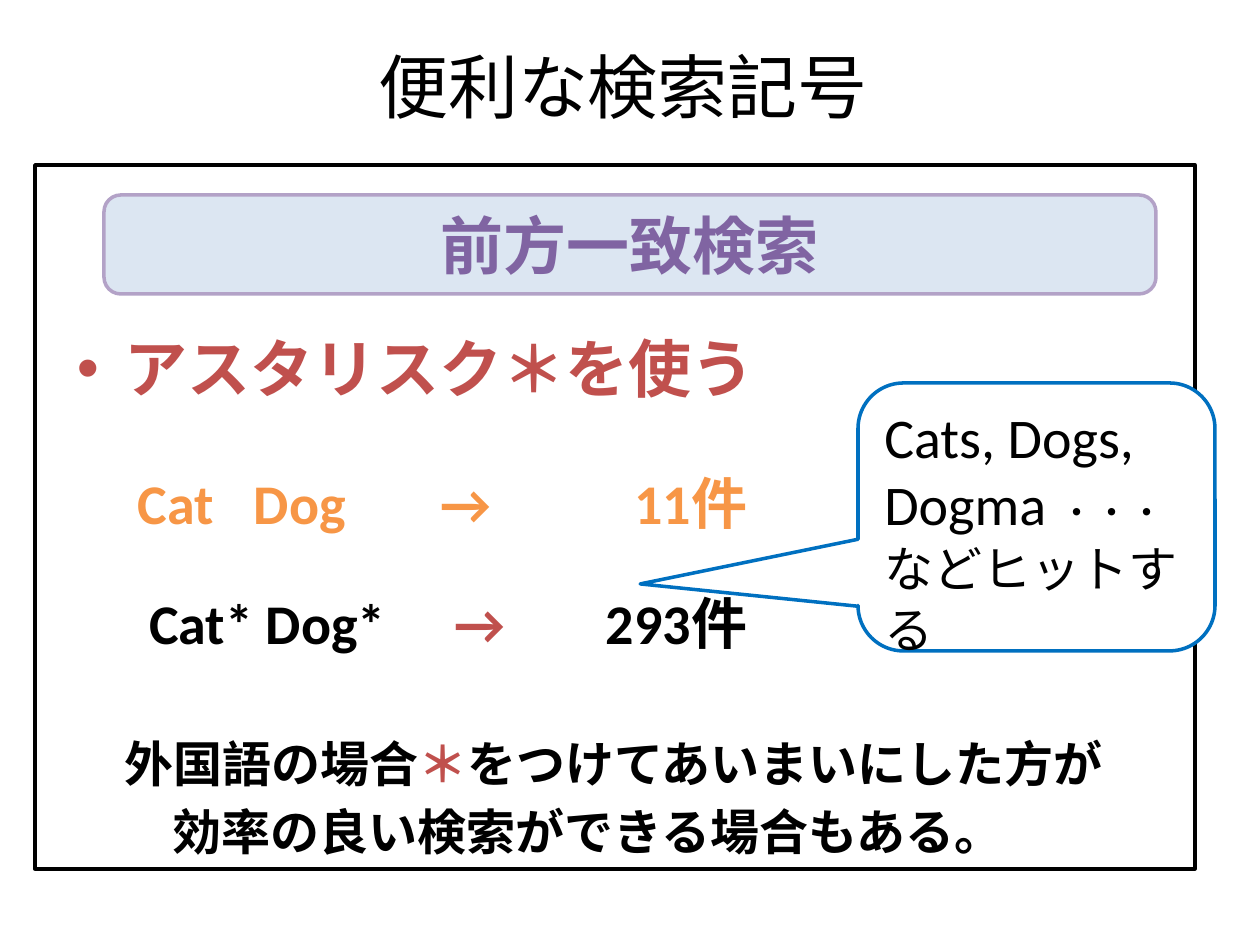
from lxml import etree
from pptx import Presentation
from pptx.dml.color import RGBColor
from pptx.enum.shapes import MSO_SHAPE
from pptx.enum.text import MSO_ANCHOR, PP_ALIGN
from pptx.oxml.ns import qn
from pptx.util import Pt

PX = 7257  # EMU in one px, 126 px to the inch
FONT = "Calibri"
BLACK, WHITE, RED, ORANGE = "000000", "FFFFFF", "C0504D", "F79646"
PURPLE, LILAC, PALE_BLUE, BLUE = "8064A2", "B3A2C7", "DCE6F2", "0070C0"
TOP, MIDDLE = MSO_ANCHOR.TOP, MSO_ANCHOR.MIDDLE
LEFT, CENTER, RIGHT = PP_ALIGN.LEFT, PP_ALIGN.CENTER, PP_ALIGN.RIGHT

TITLE = "便利な検索記号"
HEADING = "前方一致検索"
POINT = "アスタリスク＊を使う"
INDENT = 48

# top, then cells of text, colour, left, width, alignment
EXAMPLES = [
    (480, [("Cat", ORANGE, 138, 100, LEFT), ("Dog", ORANGE, 254, 120, LEFT),
           ("→", ORANGE, 440, 80, LEFT), ("11件", ORANGE, 567, 180, RIGHT)]),
    (600, [("Cat* Dog*", BLACK, 149, 270, LEFT),
           ("→", RED, 455, 80, LEFT), ("293件", BLACK, 567, 180, RIGHT)]),
]
# left margin, spans (text, colour)
ADVICE = [
    (INDENT, [("外国語の場合", BLACK), ("＊", RED),
              ("をつけてあいまいにした方が", BLACK)]),
    (2 * INDENT, [("効率の良い検索ができる場合もある。", BLACK)]),
]
# line height in points, spans (text, size)
CALLOUT = [
    (38, [("Cats, Dogs,", 32)]),
    (38, [("Dogma ", 32), ("・・・", 20)]),
    (35, [("などヒットする", 28)]),
]


def px(value):
    return int(value * PX)


def rgb(value):
    return RGBColor.from_string(value)


def add_panel(page, kind, place, fill, line, adjustments=()):
    panel = page.shapes.add_shape(kind, *map(px, place))
    panel.shadow.inherit = False
    panel.fill.solid()
    panel.fill.fore_color.rgb = rgb(fill)
    panel.line.color.rgb = rgb(line)
    panel.line.width = Pt(2)
    for index, value in enumerate(adjustments):
        panel.adjustments[index] = value
    return panel


def set_frame(box, anchor, side=13, top=6):
    frame = box.text_frame
    frame.word_wrap = True
    frame.vertical_anchor = anchor
    frame.margin_left = frame.margin_right = px(side)
    frame.margin_top = frame.margin_bottom = px(top)
    return frame


def add_text_box(page, place, anchor=TOP, side=0):
    return set_frame(page.shapes.add_textbox(*map(px, place)), anchor, side, 0)


def next_para(frame, index=0, align=LEFT, height=None):
    para = frame.add_paragraph() if index else frame.paragraphs[0]
    para.alignment = align
    if height:
        para.line_spacing = Pt(height)
    return para


def add_span(para, text, size, color, bold=False):
    span = para.add_run()
    span.text = text
    span.font.name = FONT
    span.font.size = Pt(size)
    span.font.bold = bold
    span.font.color.rgb = rgb(color)


def set_indent(para, margin, hanging=0):
    props = para._p.get_or_add_pPr()
    props.set("marL", str(px(margin)))
    props.set("indent", str(px(-hanging)))
    return props


def add_point(page):
    para = next_para(add_text_box(page, (77, 342, 770, 63)), height=36)
    props = set_indent(para, INDENT, INDENT)
    etree.SubElement(props, qn("a:buFont"), typeface="Arial")
    etree.SubElement(props, qn("a:buChar"), char="•")
    add_span(para, POINT, 36, RED, True)


def add_examples(page):
    for top, cells in EXAMPLES:
        for text, color, left, width, align in cells:
            frame = add_text_box(page, (left, top, width, 56))
            add_span(next_para(frame, align=align, height=32), text, 32, color, True)


def add_advice(page):
    frame = add_text_box(page, (77, 743, 1110, 117))
    for index, (margin, spans) in enumerate(ADVICE):
        para = next_para(frame, index, height=28)
        para.space_before = Pt(11 * index)
        set_indent(para, margin)
        for text, color in spans:
            add_span(para, text, 28, color, True)


def add_callout(page):
    bubble = add_panel(page, MSO_SHAPE.ROUNDED_RECTANGULAR_CALLOUT,
                       (858, 383, 357, 268), WHITE, BLUE, (-1.11, 0.25, 0.17))
    frame = set_frame(bubble, TOP, top=7)
    for index, (height, spans) in enumerate(CALLOUT):
        para = next_para(frame, index, height=height)
        for text, size in spans:
            add_span(para, text, size, BLACK)


def main():
    deck = Presentation()
    deck.slide_width, deck.slide_height = px(1260), px(945)
    page = deck.slides.add_slide(deck.slide_layouts[6])

    title = add_text_box(page, (35, 26, 1176, 118), MIDDLE, 13)
    add_span(next_para(title, align=CENTER), TITLE, 40, BLACK)

    add_panel(page, MSO_SHAPE.RECTANGLE, (35, 165, 1160, 704), WHITE, BLACK)
    add_point(page)
    add_examples(page)
    add_advice(page)

    banner = add_panel(page, MSO_SHAPE.ROUNDED_RECTANGLE, (104, 195, 1052, 99),
                       PALE_BLUE, LILAC, (0.17,))
    heading = set_frame(banner, MIDDLE)
    add_span(next_para(heading, align=CENTER), HEADING, 36, PURPLE, True)

    add_callout(page)
    deck.save("out.pptx")


if __name__ == "__main__":
    main()
